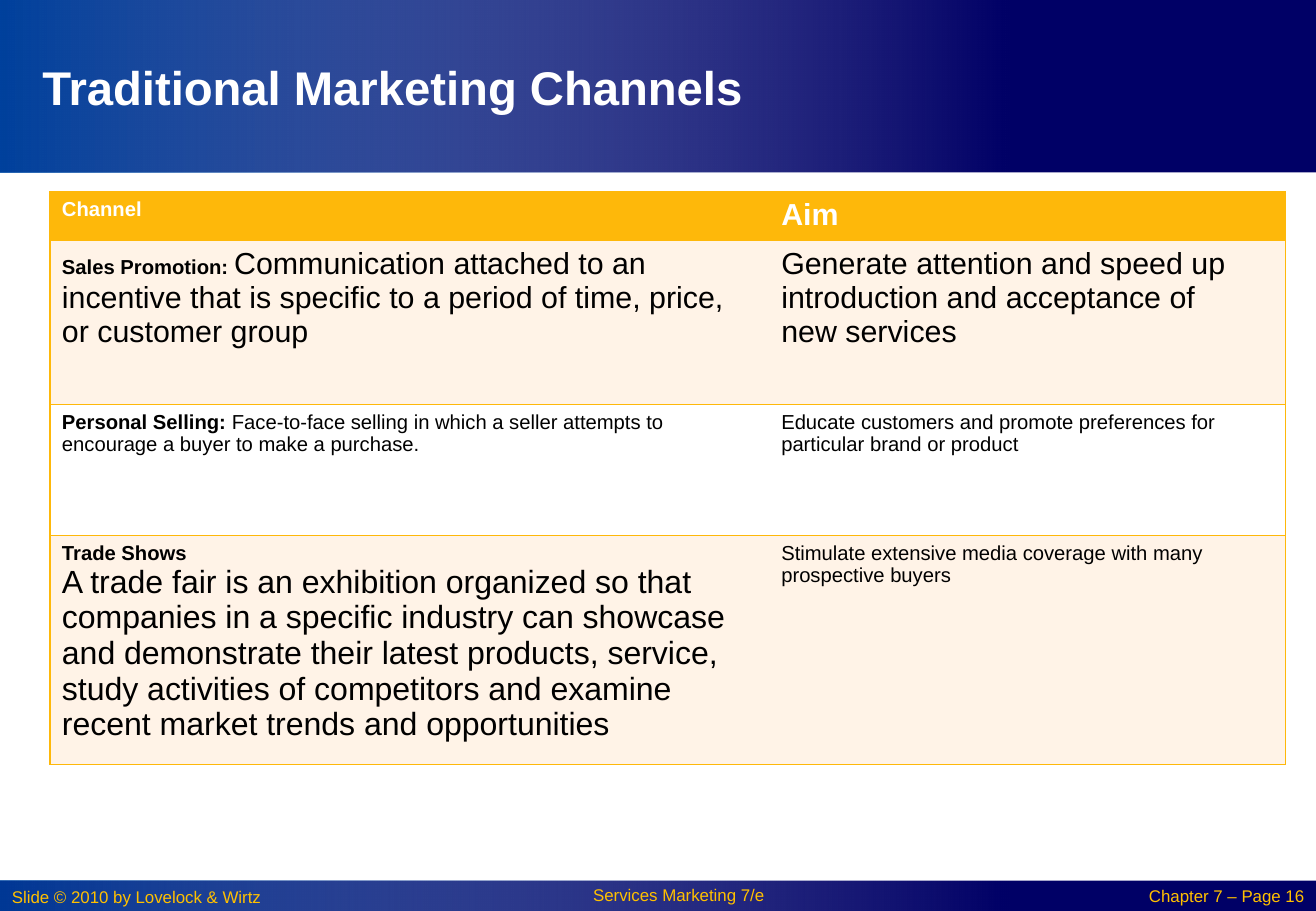
"""Build the Traditional Marketing Channels slide."""
from lxml import etree
from pptx import Presentation
from pptx.dml.color import RGBColor
from pptx.enum.shapes import MSO_SHAPE
from pptx.enum.text import MSO_ANCHOR, PP_ALIGN
from pptx.oxml.ns import qn
from pptx.util import Inches, Pt

RECTANGLE = MSO_SHAPE.RECTANGLE
MIDDLE, TOP = MSO_ANCHOR.MIDDLE, MSO_ANCHOR.TOP
LEFT, CENTER, RIGHT = PP_ALIGN.LEFT, PP_ALIGN.CENTER, PP_ALIGN.RIGHT

THEME = {
    "font": "Arial",
    "navy": "000066", "blue": "0152AB", "white": "FFFFFF", "black": "000000",
    "footer": "FFC000", "gold": "FEB80A", "cream": "FFF3E7",
    "title_size": 28, "footer_size": 10, "small": 12, "large": 18, "larger": 19,
}


def color(name):
    return RGBColor.from_string(THEME[name])


def write(frame, paragraphs, ink, align=LEFT, spacing=1.0):
    """Fill a text frame with paragraphs of (text, size, bold) spans."""
    frame.word_wrap = True
    for index, spans in enumerate(paragraphs):
        para = frame.add_paragraph() if index else frame.paragraphs[0]
        para.alignment = align
        para.line_spacing = spacing
        for text, size, bold in spans:
            span = para.add_run()
            span.text = text
            formats = {"name": THEME["font"], "size": Pt(THEME[size]), "bold": bold}
            for key, value in formats.items():
                setattr(span.font, key, value)
            span.font.color.rgb = color(ink)


deck = Presentation()
deck.slide_width, deck.slide_height = Inches(10.83), Inches(7.5)
page = deck.slides.add_slide(deck.slide_layouts[6])

for top, height, opacity in [(7.25, 0.25, 69), (0, 1.42, 80)]:
    for width, is_glow in [(10.83, False), (8.33, True)]:
        band = page.shapes.add_shape(
            RECTANGLE, 0, Inches(top), Inches(width), Inches(height))
        band.shadow.inherit = False
        band.line.fill.background()
        if is_glow:
            band.fill.gradient()
            band.fill.gradient_angle = 0
            stops = zip(band.fill.gradient_stops, ["blue", "white"], [0, 1])
            for stop, name, position in stops:
                stop.color.rgb = color(name)
                stop.position = position
            tints = band._element.spPr.iter(qn("a:srgbClr"))
            for tint, percent in zip(list(tints), [opacity, 0]):
                etree.SubElement(tint, qn("a:alpha"), val=str(percent * 1000))
        else:
            band.fill.solid()
            band.fill.fore_color.rgb = color("navy")

labels = [
    ("Slide © 2010 by Lovelock & Wirtz", 0, 7.25, 2.58, 0.28,
     "footer_size", False, "footer", LEFT, 1.0, TOP),
    ("Services Marketing 7/e", 4.25, 7.25, 2.67, 0.25,
     "footer_size", False, "footer", CENTER, 0.9, TOP),
    ("Chapter 7 – Page 16", 9.08, 7.26, 1.75, 0.25,
     "footer_size", False, "footer", RIGHT, 0.9, TOP),
    ("Traditional Marketing Channels", 0.25, 0.25, 7, 0.92,
     "title_size", True, "white", LEFT, 1.0, MIDDLE),
]
for text, left, top, width, height, size, bold, ink, align, spacing, anchor in labels:
    box = page.shapes.add_textbox(
        Inches(left), Inches(top), Inches(width), Inches(height))
    box.text_frame.vertical_anchor = anchor
    write(box.text_frame, [[(text, size, bold)]], ink, align, spacing)

column_widths = [5.92, 3.92, 0.33]
row_heights = [0.39, 1.35, 1.08, 1.75]
row_fills = ["gold", "cream", "white", "cream"]
channels = [
    ([[("Channel", "small", True)]],
     [[("Aim", "large", True)]]),
    ([[("Sales Promotion: ", "small", True),
       ("Communication attached to an incentive that is specific to a period of "
        "time, price, or customer group", "large", False)]],
     [[("Generate attention and speed up introduction and acceptance of new "
        "services", "large", False)]]),
    ([[("Personal Selling: ", "small", True),
       ("Face-to-face selling in which a seller attempts to encourage a buyer to "
        "make a purchase.", "small", False)]],
     [[("Educate customers and promote preferences for particular brand or "
        "product", "small", False)]]),
    ([[("Trade Shows", "small", True)],
      [("A trade fair is an exhibition organized so that companies in a specific "
        "industry can showcase and demonstrate their latest products, service, "
        "study activities of competitors and examine recent market trends and "
        "opportunities", "larger", False)]],
     [[("Stimulate extensive media coverage with many prospective buyers",
        "small", False)]]),
]
table = page.shapes.add_table(
    len(row_heights), len(column_widths), Inches(0.41), Inches(1.58),
    Inches(sum(column_widths)), Inches(sum(row_heights))).table
table.horz_banding = False
for column, width in zip(table.columns, column_widths):
    column.width = Inches(width)

last_column = len(column_widths) - 1
for row_index, (height, fill) in enumerate(zip(row_heights, row_fills)):
    table.rows[row_index].height = Inches(height)
    for column_index in range(len(column_widths)):
        cell = table.cell(row_index, column_index)
        properties = cell._tc.get_or_add_tcPr()
        borders = {"L": column_index == 0, "R": column_index == last_column,
                   "T": True, "B": True}
        for side, shown in borders.items():
            edge = etree.SubElement(properties, qn("a:ln" + side), w=str(Pt(1)))
            if shown:
                paint = etree.SubElement(edge, qn("a:solidFill"))
                etree.SubElement(paint, qn("a:srgbClr"), val=THEME["gold"])
            else:
                etree.SubElement(edge, qn("a:noFill"))
        cell.fill.solid()
        cell.fill.fore_color.rgb = color(fill)
        if column_index < last_column:
            write(cell.text_frame, channels[row_index][column_index],
                  "black" if row_index else "white")

deck.save("out.pptx")
